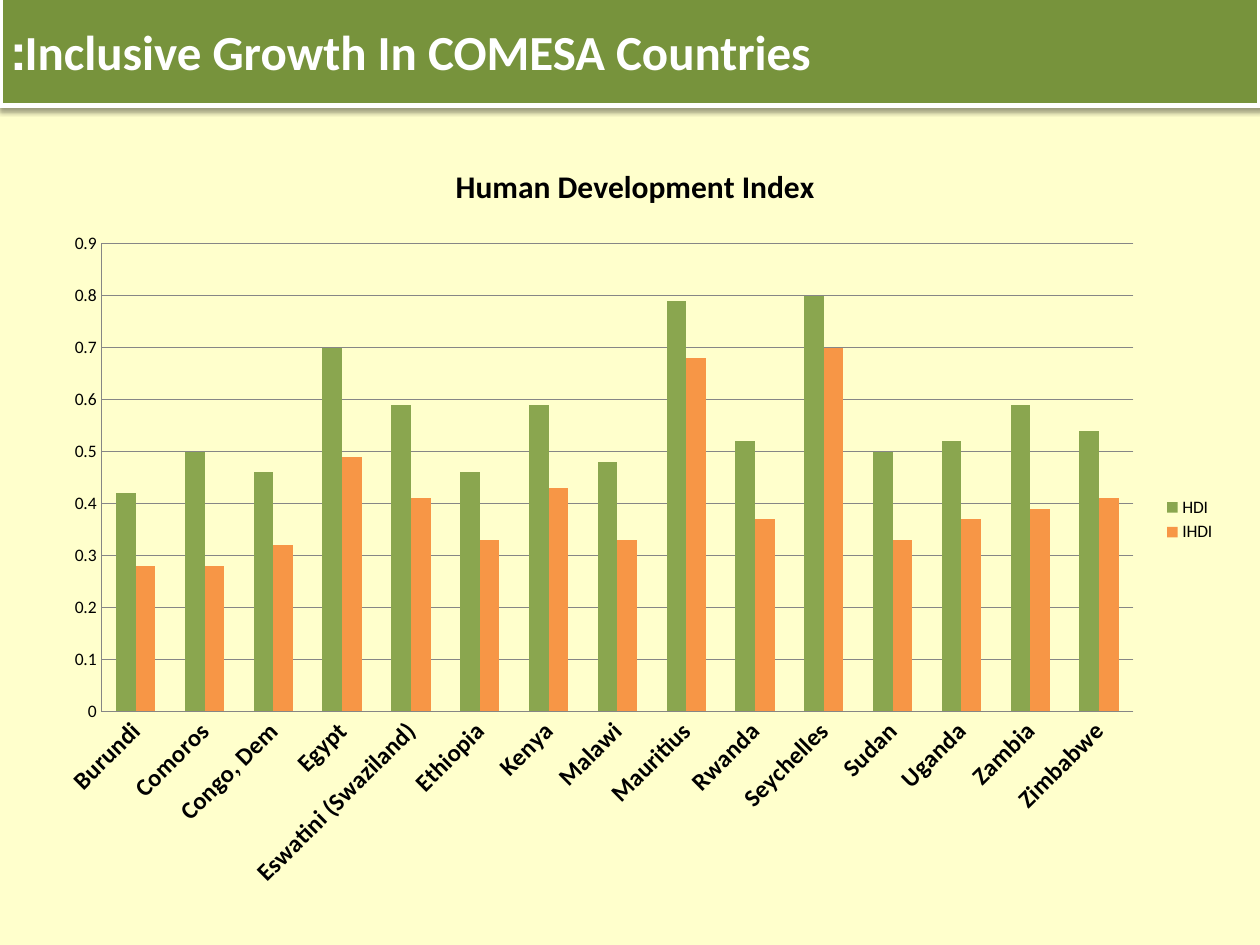
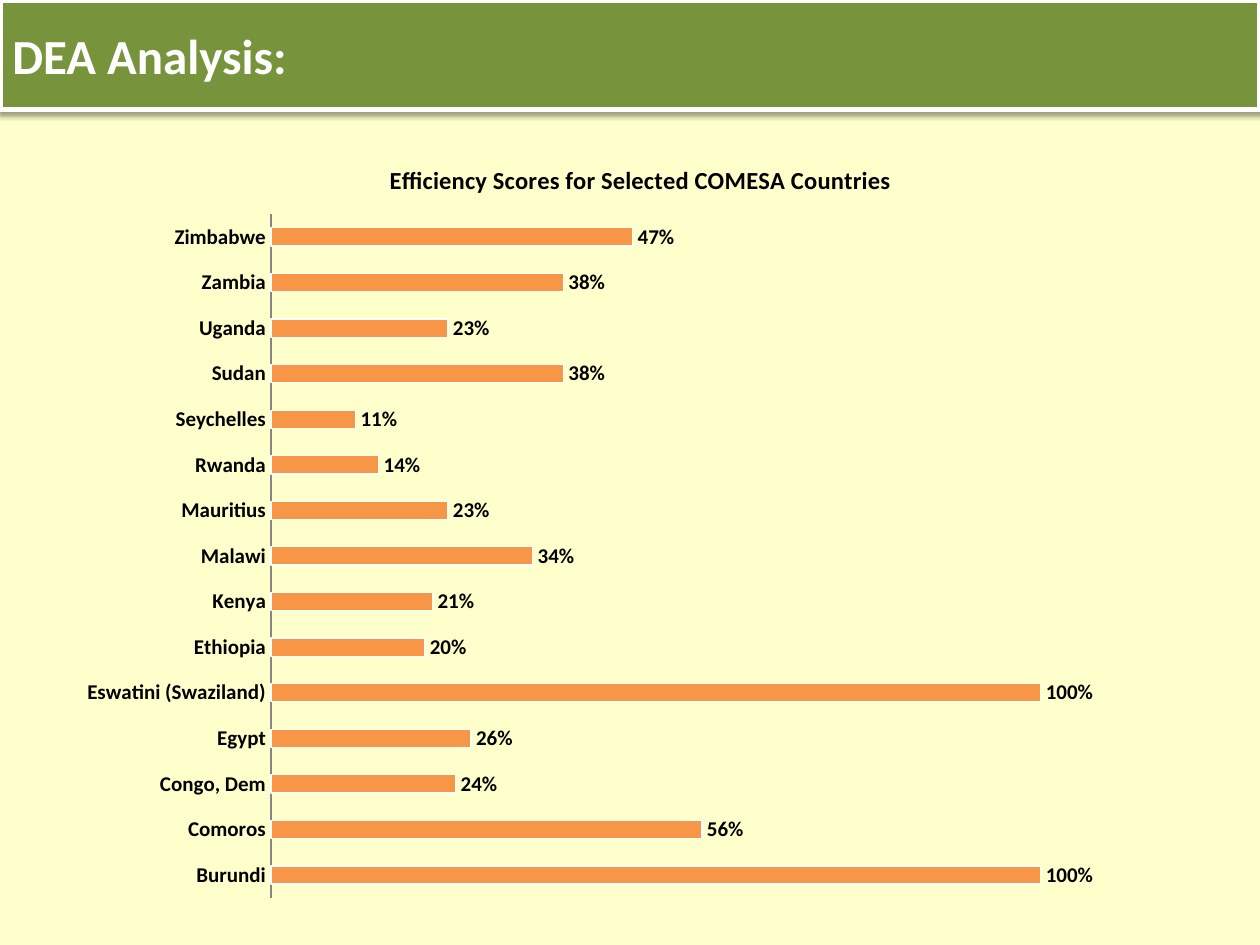
from lxml import etree
from pptx import Presentation
from pptx.chart.data import CategoryChartData
from pptx.dml.color import RGBColor
from pptx.enum.chart import (XL_CHART_TYPE, XL_LABEL_POSITION,
                             XL_LEGEND_POSITION, XL_TICK_MARK)
from pptx.enum.shapes import MSO_SHAPE
from pptx.enum.text import MSO_ANCHOR, PP_ALIGN
from pptx.oxml import parse_xml
from pptx.oxml.ns import nsdecls, qn
from pptx.util import Pt

# Content
COUNTRIES = ["Burundi", "Comoros", "Congo, Dem", "Egypt", "Eswatini (Swaziland)",
             "Ethiopia", "Kenya", "Malawi", "Mauritius", "Rwanda", "Seychelles",
             "Sudan", "Uganda", "Zambia", "Zimbabwe"]
HDI = [0.42, 0.5, 0.46, 0.7, 0.59, 0.46, 0.59, 0.48,
       0.79, 0.52, 0.8, 0.5, 0.52, 0.59, 0.54]
IHDI = [0.28, 0.28, 0.32, 0.49, 0.41, 0.33, 0.43, 0.33,
        0.68, 0.37, 0.7, 0.33, 0.37, 0.39, 0.41]
EFFICIENCY = [1, 0.56, 0.24, 0.26, 1, 0.2, 0.21, 0.34,
              0.23, 0.14, 0.11, 0.38, 0.23, 0.38, 0.47]

# Shared look
FONT = "Calibri"
CREAM = RGBColor(0xFF, 0xFF, 0xCC)
BAND_GREEN = RGBColor(0x77, 0x93, 0x3C)
BAR_GREEN = RGBColor(0x8A, 0xA6, 0x4F)
ORANGE = RGBColor(0xF7, 0x96, 0x46)
GRAY = RGBColor(0x86, 0x86, 0x86)
WHITE = RGBColor(0xFF, 0xFF, 0xFF)
BLACK = RGBColor(0, 0, 0)
PAGE_WIDTH, PAGE_HEIGHT, BAND_HEIGHT = 720, 540, 62.6

BAND_SHADOW = (
    f'<a:effectLst {nsdecls("a")}><a:outerShdw blurRad="{Pt(3.1)}" dist="{Pt(1.6)}" '
    'dir="5400000" rotWithShape="0"><a:srgbClr val="000000"><a:alpha val="38000"/>'
    '</a:srgbClr></a:outerShdw></a:effectLst>')


def style_font(font, size, color=BLACK, bold=False):
    font.name = FONT
    font.size = Pt(size)
    font.bold = bold
    font.color.rgb = color


def add_page(deck, title, top=0, right_to_left=False):
    page = deck.slides.add_slide(deck.slide_layouts[6])
    page.background.fill.solid()
    page.background.fill.fore_color.rgb = CREAM
    # Title band
    band = page.shapes.add_shape(MSO_SHAPE.RECTANGLE, Pt(0), Pt(top),
                                 Pt(PAGE_WIDTH), Pt(BAND_HEIGHT))
    band.fill.solid()
    band.fill.fore_color.rgb = BAND_GREEN
    band.line.color.rgb = WHITE
    band.line.width = Pt(3)
    band.element.spPr.append(parse_xml(BAND_SHADOW))
    band.text_frame.word_wrap = True
    band.text_frame.vertical_anchor = MSO_ANCHOR.MIDDLE
    para = band.text_frame.paragraphs[0]
    para.alignment = PP_ALIGN.LEFT
    if right_to_left:
        para._p.get_or_add_pPr().set("rtl", "1")
    span = para.add_run()
    span.text = title
    style_font(span.font, 28, WHITE, bold=True)
    return page


def place_plot(chart, **fractions):
    """Fix the inner plot area as fractions (x, y, w, h) of the chart."""
    area = chart._chartSpace.chart.plotArea
    for layout in area.findall(qn("c:layout")):
        area.remove(layout)
    layout = etree.Element(qn("c:layout"))
    manual = etree.SubElement(layout, qn("c:manualLayout"))
    settings = {"layoutTarget": "inner", "xMode": "edge", "yMode": "edge", **fractions}
    for tag, value in settings.items():
        etree.SubElement(manual, qn(f"c:{tag}")).set("val", str(value))
    area.insert(0, layout)


def add_bar_chart(page, kind, frame, title, title_size, series, category_size,
                  number_format="General"):
    data = CategoryChartData(number_format=number_format)
    data.categories = COUNTRIES
    for name, values, _ in series:
        data.add_series(name, values)
    chart = page.shapes.add_chart(kind, *map(Pt, frame), data).chart
    style_font(chart.font, 10)
    # Chart title
    chart.has_title = True
    span = chart.chart_title.text_frame.paragraphs[0].add_run()
    span.text = title
    style_font(span.font, title_size, bold=True)
    chart.chart_title.include_in_layout = False
    # Axes
    for axis in (chart.category_axis, chart.value_axis):
        axis.major_tick_mark = axis.minor_tick_mark = XL_TICK_MARK.NONE
        axis.format.line.color.rgb = GRAY
        axis.format.line.width = Pt(0.75)
    style_font(chart.category_axis.tick_labels.font, category_size, bold=True)
    chart.value_axis.minimum_scale = 0
    # Bars
    plot = chart.plots[0]
    plot.vary_by_categories = False
    plot.gap_width = 150
    for bars, (_, _, color) in zip(plot.series, series):
        bars.invert_if_negative = False
        bars.format.fill.solid()
        bars.format.fill.fore_color.rgb = color
    return chart


def add_development_index(deck):
    page = add_page(deck, "Inclusive Growth In COMESA Countries:", top=-2.2,
                    right_to_left=True)
    chart = add_bar_chart(page, XL_CHART_TYPE.COLUMN_CLUSTERED, (24, 78, 678, 438),
                          "Human Development Index", 18,
                          [("HDI", HDI, BAR_GREEN), ("IHDI", IHDI, ORANGE)], 14)
    place_plot(chart, x=0.05, y=0.14, w=0.87, h=0.61)
    chart.plots[0].overlap = 0
    # Slanted country names
    labels = chart.category_axis._element.find(qn("c:txPr"))
    labels.find(qn("a:bodyPr")).set("rot", "-2700000")
    # Scale and gridlines
    scale = chart.value_axis
    scale.maximum_scale = 0.9
    scale.major_unit = 0.1
    scale.has_major_gridlines = True
    scale.major_gridlines.format.line.color.rgb = GRAY
    scale.major_gridlines.format.line.width = Pt(0.75)
    # Legend
    chart.has_legend = True
    chart.legend.position = XL_LEGEND_POSITION.RIGHT
    chart.legend.include_in_layout = False


def add_efficiency_scores(deck):
    page = add_page(deck, "DEA Analysis:")
    chart = add_bar_chart(page, XL_CHART_TYPE.BAR_CLUSTERED, (36, 78, 660, 444),
                          "Efficiency Scores for Selected COMESA Countries", 14,
                          [("Series 1", EFFICIENCY, ORANGE)], 12, "0%")
    place_plot(chart, x=0.18, y=0.1, w=0.8, h=0.88)
    chart.has_legend = False
    chart.value_axis.maximum_scale = 1.2
    chart.value_axis.has_major_gridlines = False
    chart.value_axis.visible = False
    # Bar outline and percentages
    plot = chart.plots[0]
    plot.overlap = -25
    plot.series[0].format.line.color.rgb = WHITE
    plot.series[0].format.line.width = Pt(0.75)
    labels = plot.series[0].data_labels
    labels.show_value = True
    labels.number_format = "0%"
    labels.number_format_is_linked = False
    labels.position = XL_LABEL_POSITION.OUTSIDE_END
    style_font(labels.font, 12, bold=True)


def main():
    deck = Presentation()
    deck.slide_width, deck.slide_height = Pt(PAGE_WIDTH), Pt(PAGE_HEIGHT)
    add_development_index(deck)
    add_efficiency_scores(deck)
    deck.save("out.pptx")


if __name__ == "__main__":
    main()
